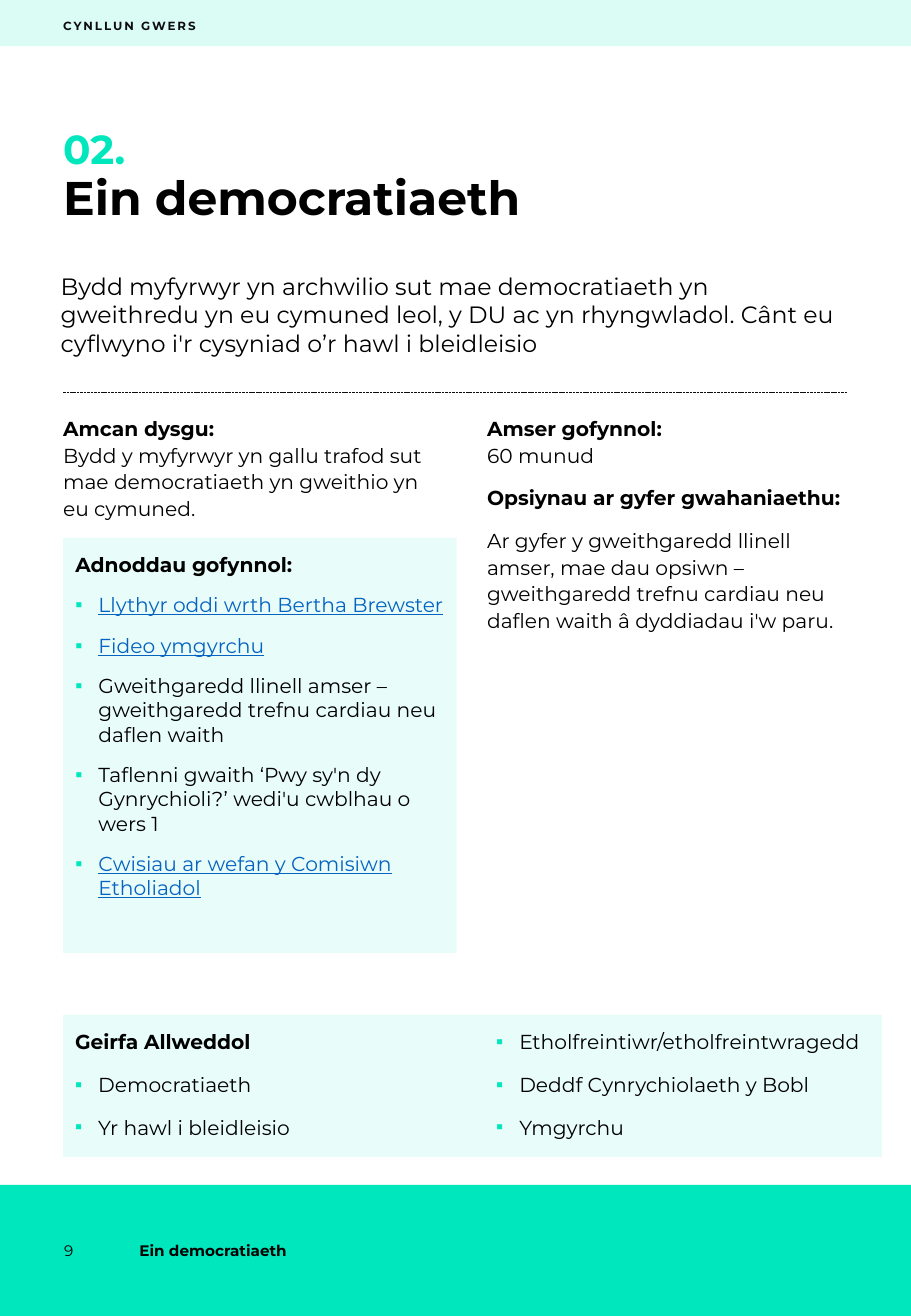
from lxml import etree
from pptx import Presentation
from pptx.dml.color import RGBColor
from pptx.enum import dml, shapes, text
from pptx.oxml.ns import qn
from pptx.util import Emu, Pt

PX = 9144  # 100 px to the inch
FONT = "Montserrat"
MINT = RGBColor(0x00, 0xE7, 0xBD)
BLACK = RGBColor(0, 0, 0)
DARK = RGBColor(0x0D, 0x0D, 0x0D)
BLUE = RGBColor(0x05, 0x63, 0xC1)
TOPIC = "Ein democratiaeth"


def px(n):
    return Emu(n * PX)


def place(item, box):
    item.left, item.top, item.width, item.height = map(px, box)


def tint(shape, alpha=100):
    """Fill with mint at a percentage of opacity, without a line."""
    shape.fill.solid()
    shape.fill.fore_color.rgb = MINT
    if alpha < 100:
        color = shape.fill._xPr.find(qn("a:solidFill"))[0]
        etree.SubElement(color, qn("a:alpha"), val=str(alpha * 1000))
    shape.line.fill.background()


def band(slide, box, alpha=100):
    shape = slide.shapes.add_shape(shapes.MSO_SHAPE.RECTANGLE, *map(px, box))
    shape.shadow.inherit = False
    tint(shape, alpha)
    return shape


def setup(frame, pad=(0, 0, 0, 0), anchor=text.MSO_ANCHOR.TOP):
    frame.word_wrap = True
    frame.auto_size = text.MSO_AUTO_SIZE.NONE
    frame.vertical_anchor = anchor
    (frame.margin_left, frame.margin_top,
     frame.margin_right, frame.margin_bottom) = map(px, pad)


def bullet(para, on):
    props = para._p.get_or_add_pPr()
    props.set("marL", str(px(19) if on else 0))
    props.set("indent", str(px(-19) if on else 0))
    if on:
        color = etree.SubElement(props, qn("a:buClr"))
        etree.SubElement(color, qn("a:srgbClr"), val=str(MINT))
        etree.SubElement(props, qn("a:buFont"), typeface="Arial")
        etree.SubElement(props, qn("a:buChar"), char="▪")
    else:
        etree.SubElement(props, qn("a:buNone"))


def write(frame, rows, size=12, color=BLACK, lead=1.1, tight=1.0):
    """Rows are (kind, words); a pair is a bold line over a plain one."""
    frame.text = "\n".join("" for _ in rows)
    for i, (kind, words) in enumerate(rows):
        para = frame.paragraphs[i]
        para.text = words.replace("\n", "\v")
        listed = kind in ("item", "link")
        bullet(para, listed)
        para.alignment = text.PP_ALIGN.LEFT
        para.line_spacing = tight if listed else lead
        para.space_before = Pt(7.5 if i else 0)
        para.space_after = Pt(2)
        for gap in para._p.findall(qn("a:br")):
            etree.SubElement(gap, qn("a:rPr"), sz=str(size * 100))
        for n, run in enumerate(para.runs):
            font = run.font
            font.name, font.size = FONT, Pt(size)
            font.bold = kind == "head" or (kind == "pair" and n == 0)
            font.underline = kind == "link"
            font.color.rgb = BLUE if kind == "link" else color


def label(slide, box, rows, size=12, pad=(0, 0, 0, 0),
          anchor=text.MSO_ANCHOR.TOP, **style):
    item = slide.shapes.add_textbox(*map(px, box))
    setup(item.text_frame, pad, anchor)
    write(item.text_frame, rows, size, **style)
    return item


def header(slide, box):
    left, top, _, high = box
    band(slide, box, 14)
    item = label(slide, (left + 52, top + 7, 270, high - 10),
                 [("head", "CYNLLUN GWERS")], 7,
                 anchor=text.MSO_ANCHOR.MIDDLE, color=DARK, lead=1.0)
    run = item.text_frame.paragraphs[0].runs[0]
    run.font._element.set("spc", "120")


def footer(slide, box):
    left, top, _, high = box
    band(slide, box)
    for x, wide, row in ((43, 62, ("plain", "9")), (105, 277, ("head", TOPIC))):
        label(slide, (left + x, top, wide, high), [row], 9, (10, 5, 10, 5),
              text.MSO_ANCHOR.MIDDLE, lead=1.0)


def opening(slide, box):
    """Lesson number, title, summary and dotted rule."""
    left, top, wide, high = box
    label(slide, (left, top, wide, 37), [("head", "02.")], 24,
          color=MINT, lead=1.0)
    title = slide.shapes.title
    place(title, (left, top + 42, wide, 88))
    setup(title.text_frame)
    write(title.text_frame, [("head", TOPIC)], 28, lead=0.9)
    label(slide, (left - 2, top + 122, wide, 70), [
        ("plain", "Bydd myfyrwyr yn archwilio sut mae democratiaeth yn "
                  "gweithredu yn eu cymuned leol, y DU ac yn rhyngwladol. "
                  "Cânt eu cyflwyno i'r cysyniad o’r hawl i bleidleisio")],
          14, lead=1.0)
    end = top + high
    rule = slide.shapes.add_connector(
        shapes.MSO_CONNECTOR.STRAIGHT,
        *map(px, (left, end, left + wide - 1, end)))
    rule.line.color.rgb = DARK
    rule.line.width = Pt(0.5)
    rule.line.dash_style = dml.MSO_LINE.SQUARE_DOT
    etree.SubElement(rule._element.spPr, qn("a:effectLst"))


def details(slide, box):
    """Aim on the left, time and options on the right."""
    left, top, wide, high = box
    label(slide, (left, top, 296, 98), [
        ("pair", "Amcan dysgu:\nBydd y myfyrwyr yn gallu trafod sut mae "
                 "democratiaeth yn gweithio yn eu cymuned.")])
    label(slide, (left + 349, top, wide - 349, high), [
        ("pair", "Amser gofynnol:\n60 munud"),
        ("head", "Opsiynau ar gyfer gwahaniaethu:"),
        ("plain", "Ar gyfer y gweithgaredd llinell amser, mae dau opsiwn – "
                  "gweithgaredd trefnu cardiau neu daflen waith â dyddiadau "
                  "i'w paru.")])


def resources(slide, box):
    body = slide.placeholders[1]
    place(body, box)
    tint(body, 9)
    setup(body.text_frame, (10, 10, 10, 10))
    write(body.text_frame, [
        ("head", "Adnoddau gofynnol:"),
        ("link", "Llythyr oddi wrth Bertha Brewster"),
        ("link", "Fideo ymgyrchu"),
        ("item", "Gweithgaredd llinell amser – gweithgaredd trefnu cardiau "
                 "neu daflen waith"),
        ("item", "Taflenni gwaith ‘Pwy sy'n dy Gynrychioli?’ wedi'u cwblhau "
                 "o wers 1"),
        ("link", "Cwisiau ar wefan y Comisiwn Etholiadol")])


def glossary(slide, box):
    frame = band(slide, box, 9).text_frame
    setup(frame, (10, 10, 10, 10))
    props = frame._txBody.bodyPr
    props.set("numCol", "2")
    props.set("spcCol", str(px(39)))
    words = ("Democratiaeth", "Yr hawl i bleidleisio",
             "Etholfreintiwr/etholfreintwragedd",
             "Deddf Cynrychiolaeth y Bobl", "Ymgyrchu")
    write(frame, [("head", "Geirfa Allweddol")]
          + [("item", word) for word in words], tight=1.1)


def main():
    deck = Presentation()
    deck.slide_width, deck.slide_height = px(750), px(1084)
    slide = deck.slides.add_slide(deck.slide_layouts[1])
    header(slide, (0, 0, 750, 38))
    footer(slide, (0, 976, 750, 108))
    opening(slide, (52, 102, 646, 221))
    details(slide, (52, 341, 644, 614))
    resources(slide, (52, 443, 324, 342))
    glossary(slide, (52, 836, 674, 117))
    deck.save("out.pptx")


if __name__ == "__main__":
    main()
